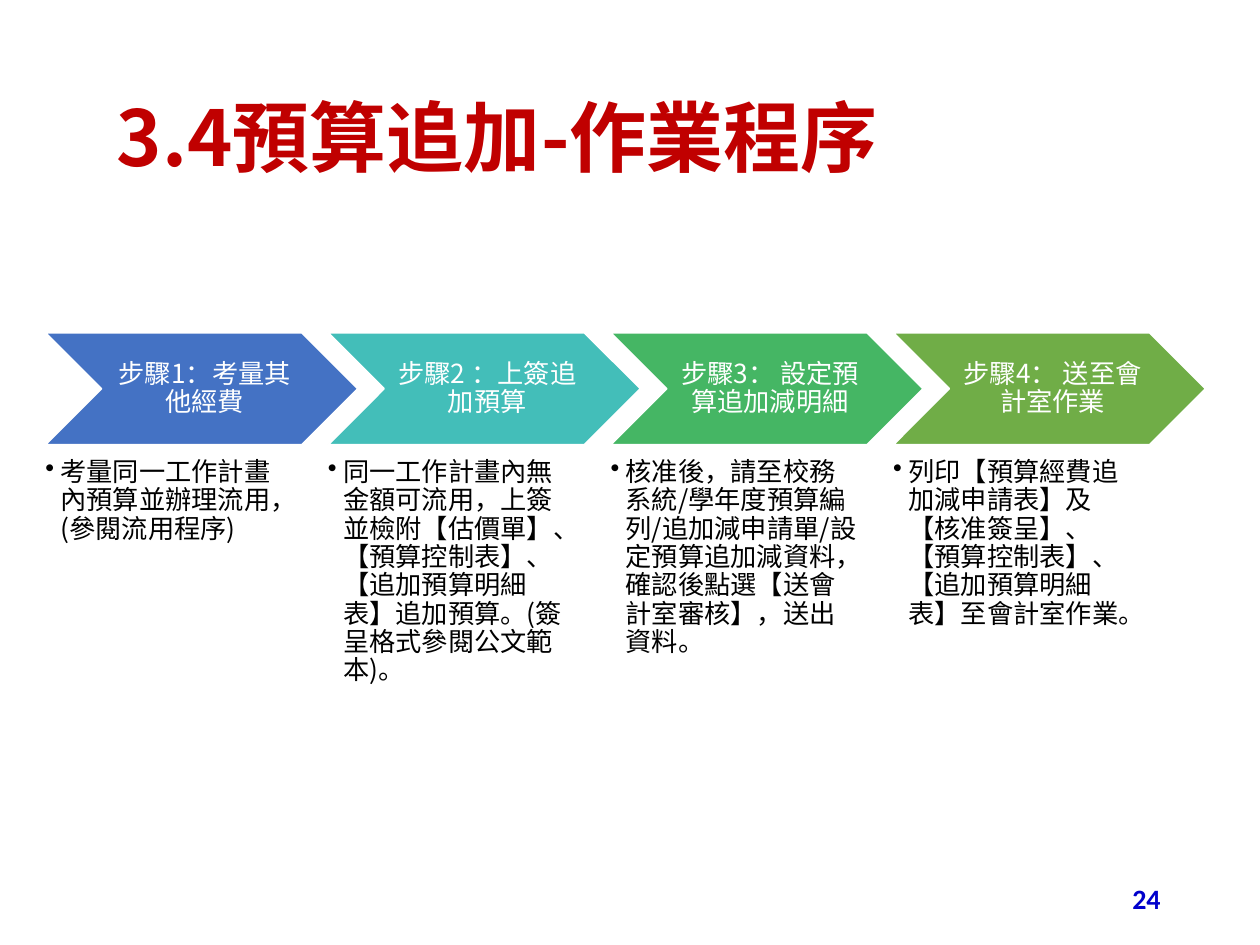
from lxml.etree import SubElement
from pptx import Presentation
from pptx.dml.color import RGBColor
from pptx.enum.shapes import MSO_SHAPE
from pptx.enum.text import MSO_ANCHOR, PP_ALIGN
from pptx.oxml.ns import qn
from pptx.util import Inches, Pt

# Content
CJK_FONT = "Noto Sans CJK SC"
TITLE = " 3.4預算追加-作業程序"
PAGE_NUMBER = "24"
WHITE = RGBColor(0xFF, 0xFF, 0xFF)
BLACK = RGBColor(0, 0, 0)
RED = RGBColor(0xC0, 0, 0)
NAVY = RGBColor(0, 0, 0xCC)
BLUE = RGBColor(0x44, 0x72, 0xC4)
TEAL = RGBColor(0x43, 0xBE, 0xB9)
GREEN = RGBColor(0x45, 0xB6, 0x64)
OLIVE = RGBColor(0x70, 0xAD, 0x47)
STEPS = [
    ("步驟1：考量其他經費", BLUE,
     "考量同一工作計畫內預算並辦理流用，(參閱流用程序)"),
    ("步驟2 ：上簽追加預算", TEAL,
     "同一工作計畫內無金額可流用，上簽並檢附【估價單】、【預算控制表】、"
     "【追加預算明細表】追加預算。(簽呈格式參閱公文範本)。"),
    ("步驟3： 設定預算追加減明細", GREEN,
     "核准後，請至校務系統/學年度預算編列/追加減申請單/設定預算追加減資料，"
     "確認後點選【送會計室審核】，送出資料。"),
    ("步驟4： 送至會計室作業", OLIVE,
     "列印【預算經費追加減申請表】及【核准簽呈】、【預算控制表】、"
     "【追加預算明細表】至會計室作業。"),
]

# Step row, in inches
ROW_LEFT, STEP_PITCH = 0.36, 2.243
CHEVRON_TOP, CHEVRON_WIDTH, CHEVRON_HEIGHT = 2.64, 2.48, 0.89
LABEL_INSET = CHEVRON_HEIGHT / 2
DETAIL_TOP, DETAIL_WIDTH, DETAIL_HEIGHT = 3.64, 1.98, 2.3
BULLET_INDENT = Inches(0.12)


def add_text(slide, box, text, size, color, font=CJK_FONT, bold=False,
             align=PP_ALIGN.LEFT, anchor=MSO_ANCHOR.MIDDLE,
             insets=(0.1, 0.05, 0.1, 0.05), bullet=False):
    frame = slide.shapes.add_textbox(*map(Inches, box)).text_frame
    frame.word_wrap = True
    frame.vertical_anchor = anchor
    (frame.margin_left, frame.margin_top,
     frame.margin_right, frame.margin_bottom) = map(Inches, insets)
    frame.text = text
    paragraph = frame.paragraphs[0]
    paragraph.alignment = align
    paragraph.line_spacing = 0.9
    if bullet:
        properties = paragraph._p.get_or_add_pPr()
        properties.set("marL", str(BULLET_INDENT))
        properties.set("indent", str(-BULLET_INDENT))
        SubElement(properties, qn("a:buChar"), char="•")
    run = paragraph.runs[0]
    run.font.size = Pt(size)
    run.font.bold = bold
    run.font.color.rgb = color
    run.font.name = font
    SubElement(run._r.get_or_add_rPr(), qn("a:ea"), typeface=font)


def add_step(slide, left, label, color, detail):
    chevron = slide.shapes.add_shape(
        MSO_SHAPE.CHEVRON, Inches(left), Inches(CHEVRON_TOP),
        Inches(CHEVRON_WIDTH), Inches(CHEVRON_HEIGHT))
    chevron.shadow.inherit = False
    chevron.fill.solid()
    chevron.fill.fore_color.rgb = color
    chevron.line.color.rgb = WHITE
    chevron.line.width = Pt(1)
    add_text(slide, (left + LABEL_INSET, CHEVRON_TOP,
                     CHEVRON_WIDTH - 2 * LABEL_INSET, CHEVRON_HEIGHT),
             label, 15, WHITE, align=PP_ALIGN.CENTER,
             insets=(0.07, 0.02, 0.02, 0.02))
    add_text(slide, (left, DETAIL_TOP, DETAIL_WIDTH, DETAIL_HEIGHT),
             detail, 15, BLACK, anchor=MSO_ANCHOR.TOP,
             insets=(0, 0, 0, 0), bullet=True)


def main():
    presentation = Presentation()
    presentation.slide_width = Inches(10)
    presentation.slide_height = Inches(7.5)
    slide = presentation.slides.add_slide(presentation.slide_layouts[6])

    # Title and page number
    add_text(slide, (0.69, 0.4, 8.62, 1.45), TITLE, 44, RED, bold=True)
    add_text(slide, (7.06, 6.95, 2.25, 0.4), PAGE_NUMBER, 16, NAVY,
             font="Calibri", bold=True, align=PP_ALIGN.RIGHT)

    # Four steps
    for index, (label, color, detail) in enumerate(STEPS):
        add_step(slide, ROW_LEFT + index * STEP_PITCH, label, color, detail)

    presentation.save("out.pptx")


if __name__ == "__main__":
    main()
